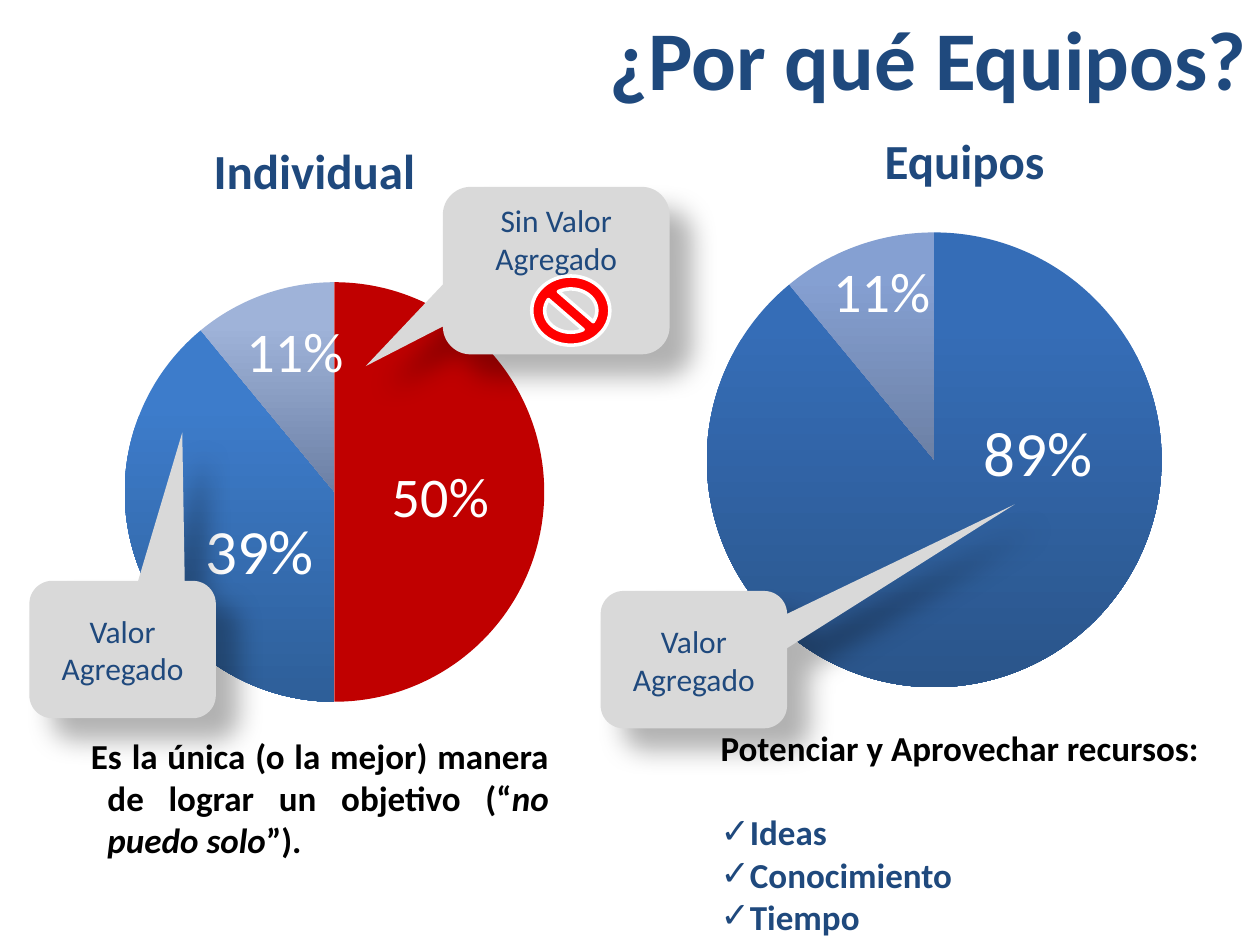
from dataclasses import dataclass

from lxml.etree import SubElement
from pptx import Presentation
from pptx.chart.data import CategoryChartData
from pptx.dml.color import RGBColor
from pptx.enum.chart import XL_CHART_TYPE as ChartType, XL_LABEL_POSITION as LabelPos
from pptx.enum.shapes import MSO_SHAPE as Shape
from pptx.enum.text import MSO_ANCHOR as Anchor, MSO_AUTO_SIZE as AutoSize, PP_ALIGN as Align
from pptx.oxml import parse_xml
from pptx.oxml.ns import nsdecls, qn
from pptx.util import Inches, Pt

CELL = 0.1
COLS, ROWS = 100, 75
FONT = "Calibri"
NAVY = RGBColor(0x1F, 0x49, 0x7D)
BLACK = RGBColor(0, 0, 0)
WHITE = RGBColor(0xFF, 0xFF, 0xFF)
GRAY = RGBColor(0xD9, 0xD9, 0xD9)
RED = RGBColor(0xFF, 0, 0)
DARK_RED = RGBColor(0xC0, 0, 0)
BRIGHT_BLUE = RGBColor(0x3D, 0x7C, 0xCB)
MID_BLUE = RGBColor(0x35, 0x6D, 0xB7)
STEEL_BLUE = RGBColor(0x2E, 0x5F, 0x99)
DEEP_BLUE = RGBColor(0x2A, 0x55, 0x8A)
PALE_BLUE = RGBColor(0x9F, 0xB3, 0xD9)
SOFT_BLUE = RGBColor(0x85, 0xA0, 0xD2)
SLATE = RGBColor(0x6C, 0x80, 0xA5)


@dataclass
class Area:
    col: float
    row: float
    cols: float
    rows: float

    def box(self) -> list:
        return [Inches(n * CELL) for n in (self.col, self.row, self.cols, self.rows)]


@dataclass
class Slice:
    value: float
    top: RGBColor
    bottom: RGBColor
    size: int
    shift: tuple
    text: str = ""


@dataclass
class Pie:
    area: Area
    center: tuple
    radius: float
    slices: list
    shown: str
    number_format: str
    label_parts: dict


@dataclass
class Callout:
    area: Area
    tail: tuple
    text: str
    anchor: Anchor = Anchor.MIDDLE


HEADING = {"name": FONT, "size": Pt(28), "bold": True}
BODY = {"name": FONT, "size": Pt(20), "bold": True}
HANGING = {"marL": "192000", "indent": "-192000"}

PIES = [
    Pie(Area(49.2, 11.7, 50.8, 50.3), (74.15, 36.5), 18.05, [
        Slice(89, MID_BLUE, DEEP_BLUE, 36, (5.2, -8.9)),
        Slice(11, SOFT_BLUE, SLATE, 32, (-1.1, -4.7))],
        "showPercent", "General", {"show_percentage": True, "show_value": False}),
    Pie(Area(0, 11.7, 53.9, 49.2), (26.55, 39.05), 16.65, [
        Slice(0.5, DARK_RED, DARK_RED, 32, (0.6, 0.5), "50% "),
        Slice(0.39, BRIGHT_BLUE, STEEL_BLUE, 36, (1.9, 2), "39%"),
        Slice(0.11, PALE_BLUE, SLATE, 32, (-0.3, -3.2))],
        "showVal", "0%", {"show_percentage": True, "show_value": True}),
]
CALLOUTS = [
    Callout(Area(2.33, 46.1, 14.8, 10.9), (0.32, -1.58), "Valor Agregado"),
    Callout(Area(35.15, 14.83, 18, 13.3), (-0.84, 0.57), "Sin Valor Agregado", Anchor.TOP),
    Callout(Area(47.67, 46.9, 14.8, 10.9), (1.72, -1.13), "Valor Agregado"),
]
RESOURCES = ["Ideas", "Conocimiento", "Tiempo"]


def apply(target, values: dict) -> None:
    for name, value in values.items():
        setattr(target, name, value)


def add_run(paragraph, text: str, style: dict, color: RGBColor, italic: bool = False) -> None:
    run = paragraph.add_run()
    run.text = text
    apply(run.font, style | {"italic": italic})
    run.font.color.rgb = color


def add_text_area(slide, area: Area):
    frame = slide.shapes.add_textbox(*area.box()).text_frame
    apply(frame, {"word_wrap": True, "auto_size": AutoSize.SHAPE_TO_FIT_TEXT})
    return frame


def add_heading(slide, area: Area, text: str) -> None:
    paragraph = add_text_area(slide, area).paragraphs[0]
    paragraph.alignment = Align.CENTER
    add_run(paragraph, text, HEADING, NAVY)


def hang(paragraph) -> None:
    paragraph.alignment = Align.JUSTIFY
    properties = paragraph._p.get_or_add_pPr()
    for name, value in HANGING.items():
        properties.set(name, value)


def manual_layout(values: dict):
    layout = parse_xml(f"<c:layout {nsdecls('c')}><c:manualLayout/></c:layout>")
    for name, value in values.items():
        SubElement(layout[0], qn(f"c:{name}")).set("val", str(value))
    return layout


def fill_slice(fill, part: Slice) -> None:
    if part.top == part.bottom:
        fill.solid()
        fill.fore_color.rgb = part.top
        return
    fill.gradient()
    fill.gradient_angle = 270
    for stop, color, position in zip(fill.gradient_stops, (part.top, part.bottom), (0.2, 1)):
        stop.color.rgb = color
        stop.position = position


def write_label(label, part: Slice) -> None:
    style = {"name": FONT, "size": Pt(part.size)}
    if part.text:
        add_run(label.text_frame.paragraphs[0], part.text, style, WHITE)
    else:
        apply(label.font, style)
        label.font.color.rgb = WHITE
    label.position = LabelPos.CENTER


def add_pie(slide, pie: Pie) -> None:
    area = pie.area
    data = CategoryChartData(number_format=pie.number_format)
    data.categories = [str(n + 1) for n in range(len(pie.slices))]
    data.add_series("Series 1", [part.value for part in pie.slices])
    chart = slide.shapes.add_chart(ChartType.PIE, *area.box(), data).chart
    apply(chart, {"has_legend": False, "has_title": False})
    apply(chart.font, {"name": FONT, "size": Pt(18)})
    chart.font.color.rgb = BLACK
    plot = chart.plots[0]
    plot.vary_by_categories = True
    series = plot.series[0]
    for index, part in enumerate(pie.slices):
        point = series.points[index]
        fill_slice(point.format.fill, part)
        write_label(point.data_label, part)
    apply(series.data_labels, pie.label_parts | {"number_format": "0%", "number_format_is_linked": False})
    for label, part in zip(chart.element.xpath(".//c:dLbl"), pie.slices):
        for kind in ("showVal", "showPercent"):
            label.find(qn(f"c:{kind}")).set("val", str(int(kind == pie.shown)))
        if not part.text:
            label.find(qn("c:txPr")).addprevious(parse_xml(
                f'<c:numFmt {nsdecls("c")} formatCode="0%" sourceLinked="0"/>'))
        x, y = part.shift
        label.insert(1, manual_layout({"x": x / area.cols, "y": y / area.rows}))
    plot_area = chart.element.xpath(".//c:plotArea")[0]
    for layout in plot_area.findall(qn("c:layout")):
        plot_area.remove(layout)
    plot_area.insert(0, manual_layout({
        "layoutTarget": "inner", "xMode": "edge", "yMode": "edge",
        "x": (pie.center[0] - pie.radius - area.col) / area.cols,
        "y": (pie.center[1] - pie.radius - area.row) / area.rows,
        "w": 2 * pie.radius / area.cols, "h": 2 * pie.radius / area.rows}))


def add_callout(slide, callout: Callout) -> None:
    bubble = slide.shapes.add_shape(Shape.ROUNDED_RECTANGULAR_CALLOUT, *callout.area.box())
    for index, value in enumerate(callout.tail):
        bubble.adjustments[index] = value
    bubble.fill.solid()
    bubble.fill.fore_color.rgb = GRAY
    bubble.line.fill.background()
    bubble._element.spPr.append(parse_xml(
        f'<a:effectLst {nsdecls("a")}><a:outerShdw blurRad="190500" dist="228600" dir="2700000" '
        'algn="ctr" rotWithShape="0"><a:srgbClr val="000000"><a:alpha val="30000"/></a:srgbClr>'
        '</a:outerShdw></a:effectLst>'))
    frame = bubble.text_frame
    apply(frame, {"word_wrap": True, "vertical_anchor": callout.anchor})
    frame.paragraphs[0].alignment = Align.CENTER
    add_run(frame.paragraphs[0], callout.text, {"name": FONT, "size": Pt(18)}, NAVY)


def add_resources(slide) -> None:
    frame = add_text_area(slide, Area(56.2, 57.2, 43.8, 17.8))
    hang(frame.paragraphs[0])
    add_run(frame.paragraphs[0], "Potenciar y Aprovechar recursos:", BODY, BLACK)
    for index, resource in enumerate(RESOURCES):
        item = frame.add_paragraph()
        apply(item, {"level": 1, "space_before": Pt(0 if index else 24)})
        hang(item)
        SubElement(item._p.pPr, qn("a:buFont")).set("typeface", FONT)
        SubElement(item._p.pPr, qn("a:buChar")).set("char", "✓")
        add_run(item, resource, BODY, NAVY)


def main() -> None:
    deck = Presentation()
    apply(deck, {"slide_width": Inches(COLS * CELL), "slide_height": Inches(ROWS * CELL)})
    slide = deck.slides.add_slide(deck.slide_layouts[5])

    title = slide.shapes.title
    apply(title, dict(zip(("left", "top", "width", "height"), Area(28.8, 1.6, 71.2, 12.5).box())))
    apply(title.text_frame, {"vertical_anchor": Anchor.TOP, "margin_top": 0, "auto_size": AutoSize.NONE})
    heading = title.text_frame.paragraphs[0]
    apply(heading, {"alignment": Align.RIGHT, "line_spacing": 0.88})
    add_run(heading, "¿Por qué Equipos?", {"name": FONT, "size": Pt(47.7), "bold": True}, NAVY)

    reason = add_text_area(slide, Area(5.45, 57.8, 39.1, 11.1)).paragraphs[0]
    hang(reason)
    add_run(reason, " Es la única (o la mejor) manera de lograr un objetivo (“", BODY, BLACK)
    add_run(reason, "no puedo solo", BODY, BLACK, italic=True)
    add_run(reason, "”).", BODY, BLACK)
    add_resources(slide)

    for pie in PIES:
        add_pie(slide, pie)
    add_heading(slide, Area(57, 9.9, 39.1, 5.7), "Equipos")
    add_heading(slide, Area(3.8, 10.7, 42.3, 5.7), "Individual")
    for callout in CALLOUTS:
        add_callout(slide, callout)

    ban = slide.shapes.add_shape(Shape.NO_SYMBOL, *Area(42.2, 21.9, 6.2, 5.5).box())
    ban.shadow.inherit = False
    ban.fill.solid()
    ban.fill.fore_color.rgb = RED
    ban.line.color.rgb = WHITE
    ban.line.width = Pt(2)
    deck.save("out.pptx")


if __name__ == "__main__":
    main()
